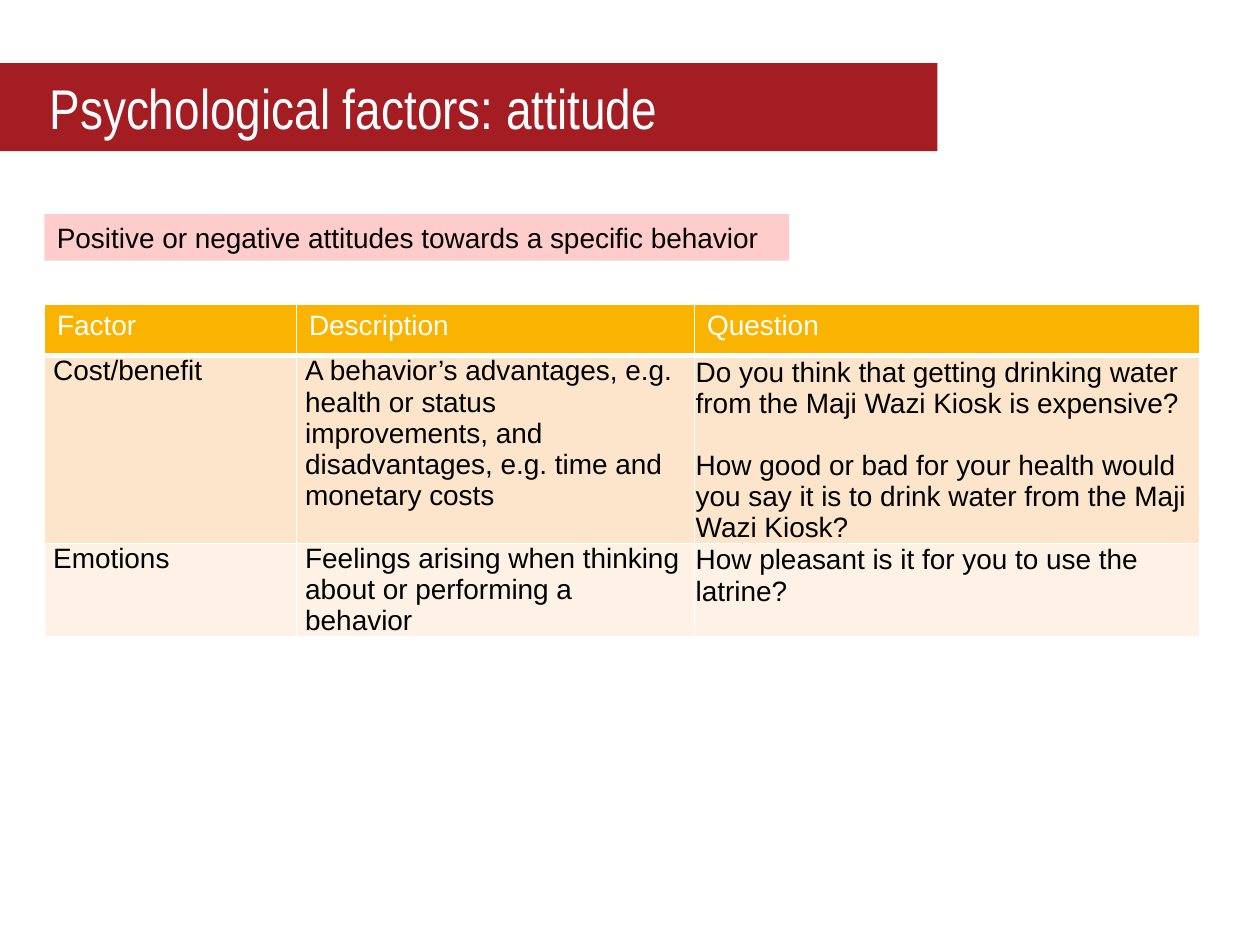
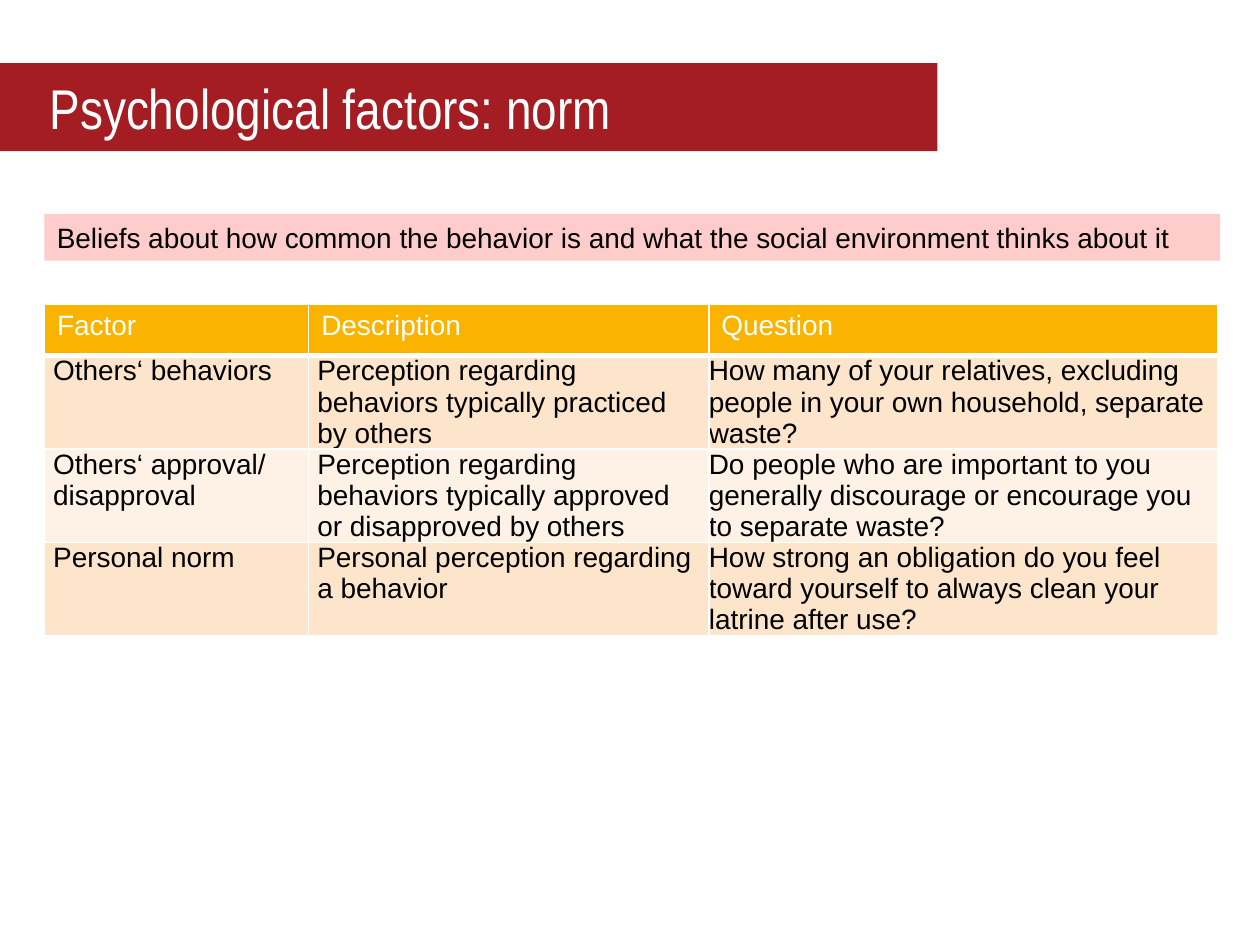
from dataclasses import dataclass

from lxml.etree import SubElement
from pptx import Presentation
from pptx.dml.color import RGBColor
from pptx.enum.shapes import MSO_SHAPE
from pptx.enum.text import MSO_ANCHOR, MSO_AUTO_SIZE, PP_ALIGN
from pptx.oxml.ns import qn
from pptx.util import Pt


@dataclass(frozen=True)
class Theme:
    white: str = "FFFFFF"
    black: str = "000000"
    title_band: str = "A31D23"
    summary_fill: str = "FFCCCC"
    header_fill: str = "FAB400"
    row_fills: tuple = ("FDE5CC", "FEF2E7")
    title_font: str = "Arial Narrow"
    body_font: str = "Arial"
    title_size: float = 32
    body_size: float = 16


theme = Theme()

LEFT = 25.4
HEADER = ("Factor", "Description", "Question")
HEADER_HEIGHT = 29.4
HEADER_MARGINS = (7.2, 3.6, 7.2, 3.6)
LABEL_MARGINS = (5, 0, 5, 0)
PARAGRAPH_GAP = 17.7

slides = [
    {
        "title": "Psychological factors: attitude",
        "summary": "Positive or negative attitudes towards a specific behavior",
        "summary_width": 425.5,
        "col_widths": (144, 227.5, 288.7),
        "row_heights": (107.3, 53.2),
        "question_margins": (0.7, 0.7, 0.7, 0),
        "rows": [
            ("Cost/benefit",
             "A behavior’s advantages, e.g. health or status improvements, "
             "and disadvantages, e.g. time and monetary costs",
             "Do you think that getting drinking water from the Maji Wazi Kiosk is expensive?\n"
             "How good or bad for your health would you say it is to drink water "
             "from the Maji Wazi Kiosk?"),
            ("Emotions",
             "Feelings arising when thinking about or performing a behavior",
             "How pleasant is it for you to use the latrine?"),
        ],
    },
    {
        "title": "Psychological factors: norm",
        "summary": "Beliefs about how common the behavior is and what the social "
                   "environment thinks about it",
        "summary_width": 671.8,
        "col_widths": (151, 228.7, 290.6),
        "row_heights": (53.2, 53.2, 53.2),
        "question_margins": (0, 0, 0, 0),
        "rows": [
            ("Others‘ behaviors",
             "Perception regarding behaviors typically practiced by others",
             "How many of your relatives, excluding people in your own household, "
             "separate waste?"),
            ("Others‘ approval/\ndisapproval",
             "Perception regarding behaviors typically approved or disapproved by others",
             "Do people who are important to you generally discourage or encourage you "
             "to separate waste?"),
            ("Personal norm",
             "Personal perception regarding a behavior",
             "How strong an obligation do you feel toward yourself to always clean "
             "your latrine after use?"),
        ],
    },
]


def write(tf, text, font, size, color):
    tf.text = text
    tf.word_wrap = True
    for p in tf.paragraphs:
        p.alignment = PP_ALIGN.LEFT
        for r in p.runs:
            r.font.name = font
            r.font.size = Pt(size)
            r.font.bold = False
            r.font.color.rgb = RGBColor.from_string(color)


def add_borders(cell, top, bottom):
    tcPr = cell._tc.get_or_add_tcPr()
    for side, width in (("L", 1), ("R", 1), ("T", top), ("B", bottom)):
        ln = SubElement(tcPr, qn(f"a:ln{side}"), w=str(Pt(width)))
        fill = SubElement(ln, qn("a:solidFill"))
        SubElement(fill, qn("a:srgbClr"), val=theme.white)


prs = Presentation()
prs.slide_width, prs.slide_height = Pt(720), Pt(540)

for content in slides:
    s = prs.slides.add_slide(prs.slide_layouts[5])

    title = s.shapes.title
    title.left, title.top, title.width, title.height = Pt(0), Pt(36), Pt(535.7), Pt(50.4)
    title.fill.solid()
    title.fill.fore_color.rgb = RGBColor.from_string(theme.title_band)
    tf = title.text_frame
    write(tf, content["title"], theme.title_font, theme.title_size, theme.white)
    tf.auto_size = MSO_AUTO_SIZE.NONE
    tf.vertical_anchor = MSO_ANCHOR.MIDDLE
    tf.margin_left = tf.margin_right = Pt(28.3)

    rows = [HEADER, *content["rows"]]
    heights = (HEADER_HEIGHT, *content["row_heights"])
    widths = content["col_widths"]
    table = s.shapes.add_table(len(rows), len(HEADER), Pt(LEFT), Pt(173.9),
                               Pt(sum(widths)), Pt(sum(heights))).table
    table.first_row = table.horz_banding = False
    for column, width in zip(table.columns, widths):
        column.width = Pt(width)

    for i, values in enumerate(rows):
        table.rows[i].height = Pt(heights[i])
        for j, value in enumerate(values):
            cell = table.cell(i, j)
            if i == 0:
                fill, color, margins = theme.header_fill, theme.white, HEADER_MARGINS
            else:
                fill, color = theme.row_fills[(i - 1) % 2], theme.black
                margins = content["question_margins"] if j == 2 else LABEL_MARGINS
            add_borders(cell, 3 if i == 1 else 1, 3 if i == 0 else 1)
            cell.fill.solid()
            cell.fill.fore_color.rgb = RGBColor.from_string(fill)
            (cell.margin_left, cell.margin_top,
             cell.margin_right, cell.margin_bottom) = map(Pt, margins)
            write(cell.text_frame, value, theme.body_font, theme.body_size, color)
            if j == 2:
                for p in cell.text_frame.paragraphs[1:]:
                    p.space_before = Pt(PARAGRAPH_GAP)

    summary = s.shapes.add_shape(MSO_SHAPE.RECTANGLE, Pt(LEFT), Pt(122.4),
                                 Pt(content["summary_width"]), Pt(26.6))
    summary.shadow.inherit = False
    summary.fill.solid()
    summary.fill.fore_color.rgb = RGBColor.from_string(theme.summary_fill)
    summary.line.fill.background()
    tf = summary.text_frame
    write(tf, content["summary"], theme.body_font, theme.body_size, theme.black)
    tf.auto_size = MSO_AUTO_SIZE.SHAPE_TO_FIT_TEXT
    tf.vertical_anchor = MSO_ANCHOR.MIDDLE

prs.save("out.pptx")
